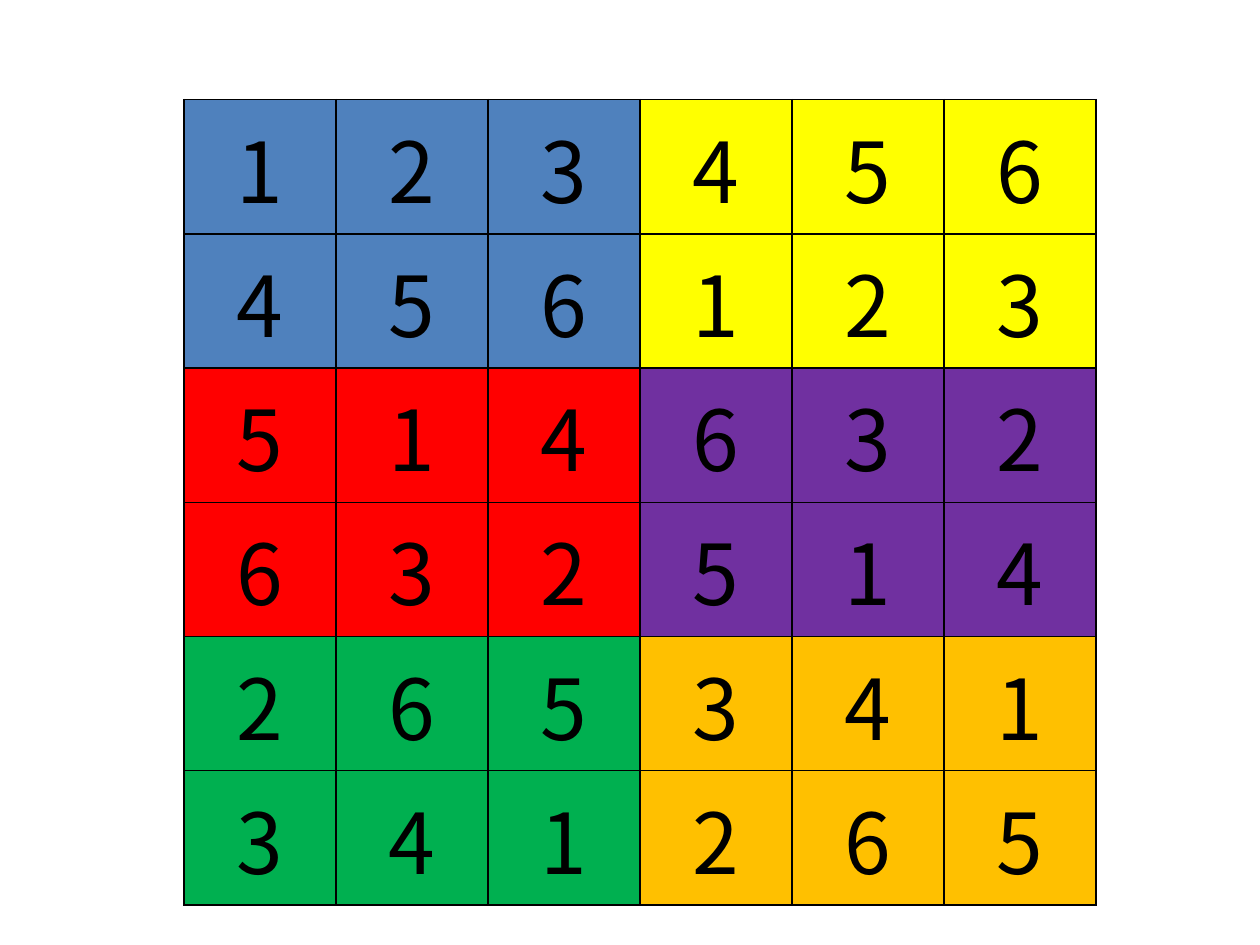
"""Build a slide with a solved six-by-six number puzzle in coloured blocks."""
from dataclasses import dataclass

from lxml.etree import SubElement
from pptx import Presentation
from pptx.dml.color import RGBColor
from pptx.enum.text import PP_ALIGN
from pptx.oxml.ns import qn
from pptx.util import Inches, Pt


@dataclass(frozen=True)
class Theme:
    font: str = "Noto Sans CJK KR"
    digit_size: int = 48
    ink: str = "000000"
    border_width: int = 1
    blocks: tuple = (
        ("4F81BD", "FFFF00"),
        ("FF0000", "7030A0"),
        ("00B050", "FFC000"),
    )


def add_borders(cell):
    properties = cell._tc.get_or_add_tcPr()
    for position, side in enumerate(("lnL", "lnR", "lnT", "lnB")):
        border = SubElement(properties, qn(f"a:{side}"), w=str(Pt(theme.border_width)))
        SubElement(SubElement(border, qn("a:solidFill")), qn("a:srgbClr"), val=theme.ink)
        properties.insert(position, border)


theme = Theme()
puzzle = ("123456", "456123", "514632", "632514", "265341", "341265")
block_rows, block_columns = 2, 3

presentation = Presentation()
presentation.slide_width = Inches(10)
presentation.slide_height = Inches(7.5)
slide = presentation.slides.add_slide(presentation.slide_layouts[6])
grid = slide.shapes.add_table(
    len(puzzle), len(puzzle[0]), Inches(1.46), Inches(0.79), Inches(7.24), Inches(5.4)
).table

for row, digits in enumerate(puzzle):
    for column, digit in enumerate(digits):
        cell = grid.cell(row, column)
        block_color = theme.blocks[row // block_rows][column // block_columns]
        cell.fill.solid()
        cell.fill.fore_color.rgb = RGBColor.from_string(block_color)
        add_borders(cell)
        cell.text = digit
        paragraph = cell.text_frame.paragraphs[0]
        paragraph.alignment = PP_ALIGN.CENTER
        paragraph.font.name = theme.font
        paragraph.font.size = Pt(theme.digit_size)
        paragraph.font.bold = False
        paragraph.font.color.rgb = RGBColor.from_string(theme.ink)

presentation.save("out.pptx")
